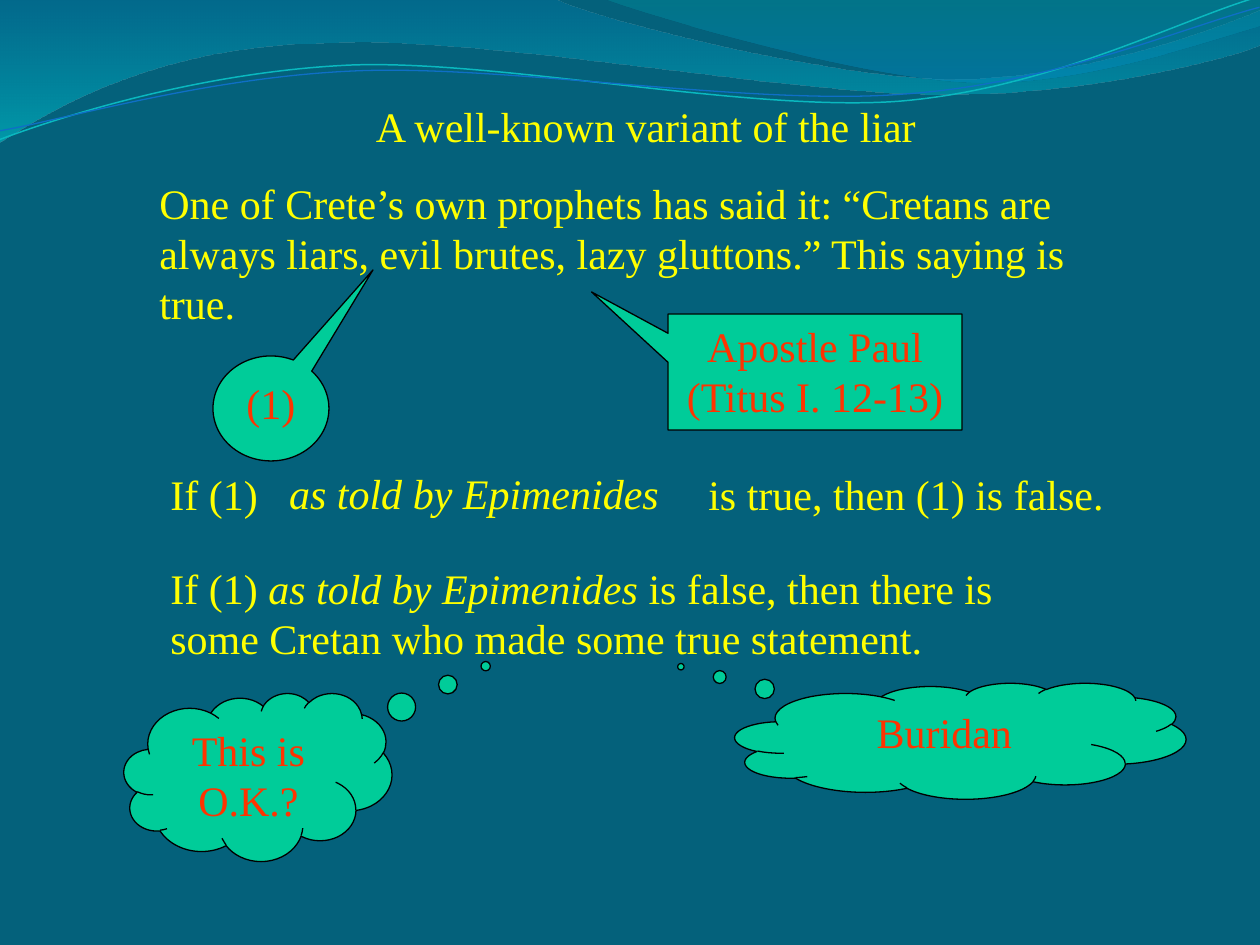
from lxml import etree
from pptx import Presentation, util as u
from pptx.dml.color import RGBColor
from pptx.enum import shapes, text
from pptx.oxml.ns import qn

PX = u.Inches(1) // 126
YELLOW, RED, GREEN, BLACK = "FFFF00", "FF3300", "00CC99", "000000"
LEFT, CENTER = text.PP_ALIGN.LEFT, text.PP_ALIGN.CENTER

TITLE = ((147, 94, 998, 64), [[("A well-known variant of the liar", False)]], CENTER)
STATEMENTS = [
    ((147, 171, 998, 165), [[("One of Crete’s own prophets has said it: “Cretans are always "
                              "liars, evil brutes, lazy gluttons.” This saying is true.", False)]], LEFT),
    ((158, 462, 998, 64), [[("If (1)\tis true, then (1) is false.", False)]], LEFT),
    ((243, 461, 462, 64), [[("as told by Epimenides", True)]], CENTER),
    ((158, 556, 945, 115), [[("If (1) ", False), ("as told by Epimenides ", True),
                             ("is false, then there is some Cretan who made some true statement.", False)]], LEFT),
]
RESULT_TAB = 538
KIND = shapes.MSO_SHAPE
CALLOUTS = [
    (KIND.RECTANGULAR_CALLOUT, (668, 314, 294, 116), (-0.76, -0.69), ["Apostle Paul", "(Titus I. 12-13)"]),
    (KIND.OVAL_CALLOUT, (213, 356, 116, 105), (0.88, -1.32), ["(1)"]),
    (KIND.CLOUD_CALLOUT, (124, 693, 268, 168), (0.85, -0.66), ["This is O.K.?"]),
    (KIND.CLOUD_CALLOUT, (735, 683, 451, 116), (-0.62, -0.64), ["Buridan"]),
]
BANDS = [
    ((0, 0), [[(554, -1)], [(600, 21), (837, 79), (955, 79)], [(1074, 79), (1207, 33), (1260, 11)],
              [(1261, 45)], [(1239, 55), (1096, 95), (940, 94)], [(784, 94), (481, 35), (324, 43)],
              [(163, 45), (58, 105), (-1, 142)]],
     [(0, "0074A1", 45), (1, "00C6CF", 55)]),
    ((604, -1), [[(641, 14), (859, 78), (969, 82)], [(1079, 87), (1210, 40), (1260, 26)], [(1260, 0)]],
     [(0, "00A1A9", 30), (0.8, "008BBF", 45)]),
]
STRANDS = [
    ((-3, 110), [[(59, 90), (200, 52), (350, 52)], [(498, 53), (745, 118), (897, 114)],
                 [(1048, 109), (1184, 45), (1260, 27)]], "0AB8BF", 0.85),
    ((-2, 101), [[(58, 94), (207, 57), (357, 58)], [(508, 59), (751, 112), (902, 107)],
                 [(1052, 104), (1187, 53), (1262, 37)]], "0F6FC6", 0.75),
]
STRAND_TILT = 357.3


def rgb(value):
    """Return the colour of a hex string."""
    return RGBColor.from_string(value)


def emu(box):
    """Return px lengths as EMU."""
    return [length * PX for length in box]


def add_outline(slide, start, pieces, close):
    """Draw straight pieces of one point and cubic pieces of three as one freeform."""
    builder = slide.shapes.build_freeform(*start, scale=PX)
    builder.add_line_segments([point for piece in pieces for point in piece], close=close)
    outline = builder.convert_to_shape()
    outline.shadow.inherit = False
    segments = iter(list(outline.element.spPr.iter(qn("a:lnTo"))))
    for piece in pieces:
        members = [next(segments) for _ in piece]
        if len(members) == 3:
            curve = etree.Element(qn("a:cubicBezTo"))
            members[0].addprevious(curve)
            for member in members:
                curve.append(member[0])
                member.getparent().remove(member)
    return outline


def add_band(slide, start, pieces, stops):
    """Draw a translucent gradient band."""
    band = add_outline(slide, start, pieces, True)
    band.line.fill.background()
    band.fill.gradient()
    band.fill.gradient_angle = 270
    for stop, (position, color, _) in zip(band.fill.gradient_stops, stops):
        stop.position = position
        stop.color.rgb = rgb(color)
    for node, (_, _, alpha) in zip(band.element.spPr.iter(qn("a:srgbClr")), stops):
        etree.SubElement(node, qn("a:alpha"), val=str(alpha * 1000))


def add_strand(slide, start, pieces, color, width):
    """Draw a thin tilted wave."""
    strand = add_outline(slide, start, pieces, False)
    strand.rotation = STRAND_TILT
    strand.fill.background()
    strand.line.color.rgb = rgb(color)
    strand.line.width = u.Pt(width)


def write(shape, paragraphs, align, color):
    """Fill a shape with formatted paragraphs of runs."""
    frame = shape.text_frame
    layout = dict(margin_left=u.Inches(0.1), margin_right=u.Inches(0.1), margin_top=u.Inches(0.05),
                  margin_bottom=u.Inches(0.05), word_wrap=True, vertical_anchor=text.MSO_ANCHOR.TOP,
                  auto_size=text.MSO_AUTO_SIZE.NONE)
    for name, value in layout.items():
        setattr(frame, name, value)
    for index, runs in enumerate(paragraphs):
        paragraph = frame.add_paragraph() if index else frame.paragraphs[0]
        paragraph.alignment = align
        for words, italic in runs:
            run = paragraph.add_run()
            run.text = words
            for name, value in dict(name="Times New Roman", size=u.Pt(24), bold=False, italic=italic).items():
                setattr(run.font, name, value)
            run.font.color.rgb = rgb(color)


def set_tab(shape, position):
    """Give the first paragraph a left tab stop."""
    properties = shape.text_frame.paragraphs[0]._p.get_or_add_pPr()
    stops = etree.SubElement(properties, qn("a:tabLst"))
    etree.SubElement(stops, qn("a:tab"), pos=str(position * PX), algn="l")


def add_callout(slide, kind, box, tip, lines):
    """Draw a callout whose pointer ends at the tip."""
    callout = slide.shapes.add_shape(kind, *emu(box))
    callout.shadow.inherit = False
    callout.fill.solid()
    callout.fill.fore_color.rgb = rgb(GREEN)
    callout.line.color.rgb = rgb(BLACK)
    callout.line.width = u.Pt(0.75)
    for index, value in enumerate(tip):
        callout.adjustments[index] = value
    write(callout, [[(line, False)] for line in lines], CENTER, RED)


def main():
    """Build the slide."""
    deck = Presentation()
    deck.slide_width, deck.slide_height = emu((1260, 945))
    slide = deck.slides.add_slide(deck.slide_layouts[5])
    slide.background.fill.solid()
    slide.background.fill.fore_color.rgb = rgb("04617B")
    for band in BANDS:
        add_band(slide, *band)
    for strand in STRANDS:
        add_strand(slide, *strand)

    box, paragraphs, align = TITLE
    title = slide.shapes.title
    title.left, title.top, title.width, title.height = emu(box)
    write(title, paragraphs, align, YELLOW)
    for box, paragraphs, align in STATEMENTS:
        statement = slide.shapes.add_textbox(*emu(box))
        write(statement, paragraphs, align, YELLOW)
        if "\t" in statement.text_frame.text:
            set_tab(statement, RESULT_TAB)
    for callout in CALLOUTS:
        add_callout(slide, *callout)
    deck.save("out.pptx")


if __name__ == "__main__":
    main()
